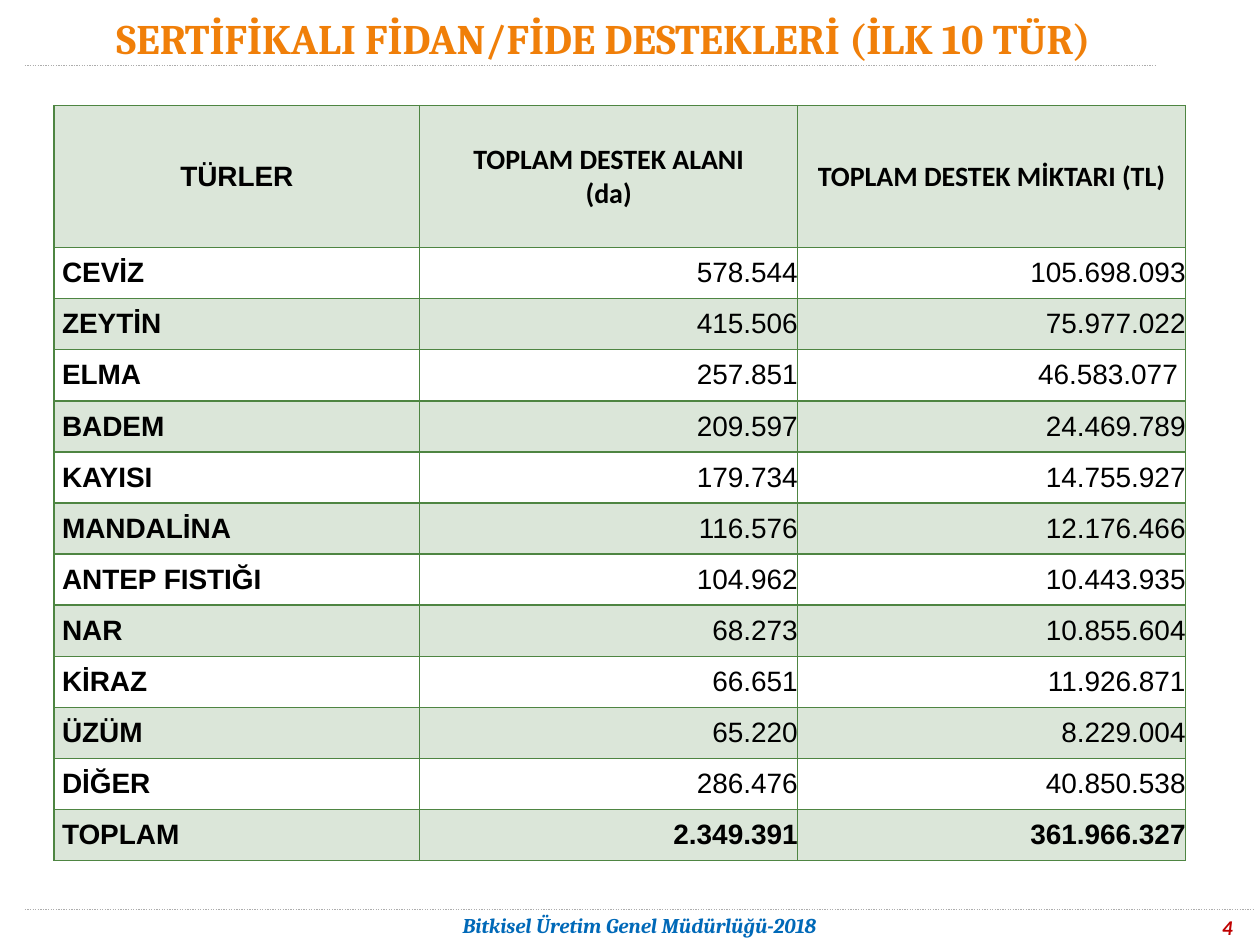
"""Builds the slide on certified sapling and seedling support by species."""
from lxml.etree import SubElement
from pptx import Presentation
from pptx.dml.color import RGBColor
from pptx.enum.dml import MSO_LINE
from pptx.enum.shapes import MSO_CONNECTOR
from pptx.enum.text import MSO_ANCHOR, PP_ALIGN
from pptx.oxml import parse_xml
from pptx.oxml.ns import nsdecls, qn
from pptx.util import Cm, Pt

GREEN = "4E8542"
HEADINGS = ["TÜRLER", "TOPLAM DESTEK ALANI\n(da)", "TOPLAM DESTEK MİKTARI (TL)"]
SPECIES = [
    ("CEVİZ", "578.544", "105.698.093"),
    ("ZEYTİN", "415.506", "75.977.022"),
    ("ELMA", "257.851", "46.583.077 "),
    ("BADEM", "209.597", "24.469.789"),
    ("KAYISI", "179.734", "14.755.927"),
    ("MANDALİNA", "116.576", "12.176.466"),
    ("ANTEP FISTIĞI", "104.962", "10.443.935"),
    ("NAR", "68.273", "10.855.604"),
    ("KİRAZ", "66.651", "11.926.871"),
    ("ÜZÜM", "65.220", "8.229.004"),
    ("DİĞER", "286.476", "40.850.538"),
    ("TOPLAM", "2.349.391", "361.966.327"),
]


def color(value):
    return RGBColor.from_string(value)


def write(frame, text, align, font_name, size, value, bold=True, italic=False):
    frame.text = text
    frame.word_wrap = True
    frame.vertical_anchor = MSO_ANCHOR.MIDDLE
    frame.margin_left = frame.margin_right = frame.margin_top = frame.margin_bottom = 0
    for paragraph in frame.paragraphs:
        paragraph.alignment = align
        paragraph.font.name = font_name
        paragraph.font.size = Pt(size)
        paragraph.font.bold = bold
        paragraph.font.italic = italic
        paragraph.font.color.rgb = color(value)


deck = Presentation()
deck.slide_width, deck.slide_height = Cm(25.4), Cm(19.05)
page = deck.slides.add_slide(deck.slide_layouts[5])

for top, right in [(1.32, 23.3), (18.34, 25.3)]:
    rule = page.shapes.add_connector(MSO_CONNECTOR.STRAIGHT, Cm(0.5), Cm(top), Cm(right), Cm(top))
    rule.line.color.rgb = color("ADADAD")
    rule.line.width = Pt(0.75)
    rule.line.dash_style = MSO_LINE.ROUND_DOT
    SubElement(rule._element.spPr, qn("a:effectLst"))

title = page.shapes.title
title.left, title.top, title.width, title.height = Cm(0.66), Cm(0.18), Cm(23.01), Cm(1.17)
write(title.text_frame, "SERTİFİKALI FİDAN/FİDE DESTEKLERİ (İLK 10 TÜR)", PP_ALIGN.CENTER, "Cambria", 24, "F07F09")

footer = page.shapes.add_textbox(Cm(4.5), Cm(18.34), Cm(16.79), Cm(0.61))
write(footer.text_frame, "Bitkisel Üretim Genel Müdürlüğü-2018", PP_ALIGN.CENTER, "Cambria", 12, "0069B8", italic=True)

number = page.shapes.add_textbox(Cm(23.25), Cm(18.38), Cm(1.6), Cm(0.61))
write(number.text_frame, "4", PP_ALIGN.RIGHT, "Calibri", 12, "C00000", italic=True)

rows = [HEADINGS, *SPECIES]
table = page.shapes.add_table(len(rows), 3, Cm(1.09), Cm(2.13), Cm(22.81), Cm(15.2)).table
table.first_row = table.horz_banding = False
for column, width in zip(table.columns, [7.37, 7.62, 7.82]):
    column.width = Cm(width)

for row_index, values in enumerate(rows):
    heading = row_index == 0
    table.rows[row_index].height = Cm(2.86 if heading else 1.03)
    for column_index, value in enumerate(values):
        cell = table.cell(row_index, column_index)
        label = column_index == 0
        align = PP_ALIGN.CENTER if heading else PP_ALIGN.LEFT if label else PP_ALIGN.RIGHT
        font_name = "Calibri" if heading and not label else "Arial"
        bold = heading or label or values[0] == "TOPLAM"
        write(cell.text_frame, value, align, font_name, 16, "000000", bold)
        cell.vertical_anchor = MSO_ANCHOR.MIDDLE
        cell.margin_left = Cm(0.16 if label and not heading else 0)
        cell.margin_right = cell.margin_top = cell.margin_bottom = 0
        properties = cell._tc.get_or_add_tcPr()
        for side in ["lnL", "lnR", "lnT", "lnB"]:
            properties.append(parse_xml(
                f'<a:{side} {nsdecls("a")} w="12700"><a:solidFill>'
                f'<a:srgbClr val="{GREEN}"/></a:solidFill></a:{side}>'))
        if row_index % 2:
            cell.fill.background()
        else:
            cell.fill.solid()
            cell.fill.fore_color.rgb = color(GREEN)
            tint = properties.find(f'{qn("a:solidFill")}/{qn("a:srgbClr")}')
            SubElement(tint, qn("a:alpha"), val="20000")

deck.save("out.pptx")
